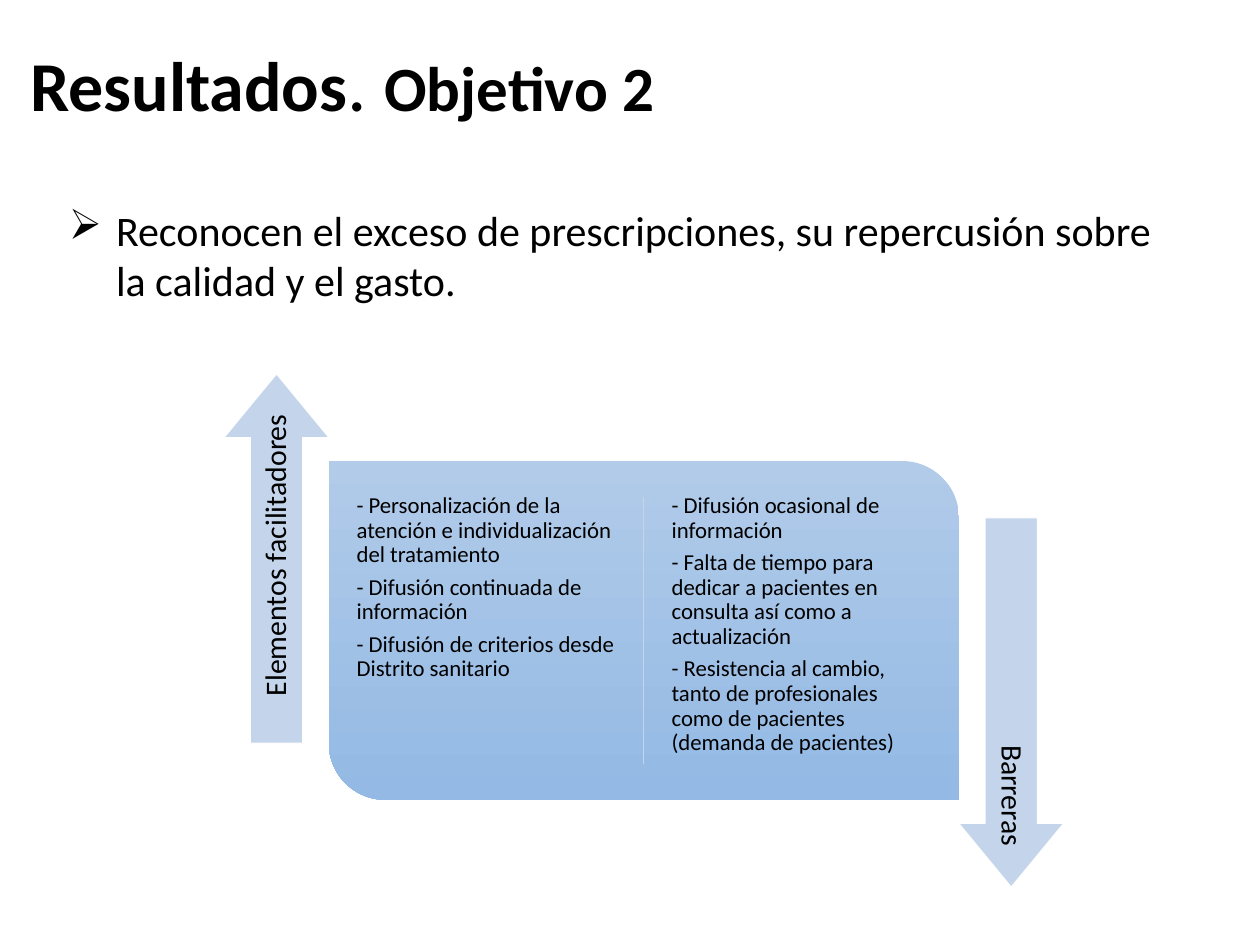
from lxml.etree import SubElement
from pptx import Presentation
from pptx.dml.color import RGBColor as RGB
from pptx.enum.shapes import MSO_CONNECTOR as LINE, MSO_SHAPE as SHAPE
from pptx.enum.text import MSO_ANCHOR as ANCHOR, PP_ALIGN as ALIGN
from pptx.oxml.ns import qn
from pptx.util import Cm, Pt

FONT = "Calibri"
COLORS = {"text": "000000", "top": "B1CBE9", "base": "93B9E4",
          "arrow": "C4D5EB", "edge": "FFFFFF"}
HELPS = ["- Personalización de la atención e individualización del tratamiento",
         "- Difusión continuada de información",
         "- Difusión de criterios desde Distrito sanitario"]
LIMITS = ["- Difusión ocasional de información",
          "- Falta de tiempo para dedicar a pacientes en consulta así como a actualización",
          "- Resistencia al cambio, tanto de profesionales como de pacientes "
          "(demanda de pacientes)"]


def color(name):
    return RGB.from_string(COLORS[name])


def spot(box):
    return [Cm(v) for v in box]


def add_text(slide, box, paras, size=13, inset=None, align=ALIGN.LEFT,
             anchor=ANCHOR.TOP, lead=0.9, after=0, turn=0):
    """Each paragraph is a string or a list of (text, size, bold) runs."""
    shape = slide.shapes.add_textbox(*spot(box))
    shape.rotation = turn
    frame = shape.text_frame
    frame.word_wrap = True
    frame.vertical_anchor = anchor
    if inset is not None:
        frame.margin_left = frame.margin_right = Cm(inset)
        frame.margin_top = frame.margin_bottom = Cm(inset)
    for i, runs in enumerate(paras):
        para = frame.add_paragraph() if i else frame.paragraphs[0]
        para.alignment = align
        para.line_spacing = lead
        para.space_after = Pt(after)
        if isinstance(runs, str):
            runs = [(runs, size, False)]
        for text, points, bold in runs:
            run = para.add_run()
            run.text = text
            font = run.font
            font.name, font.size, font.bold = FONT, Pt(points), bold
            font.color.rgb = color("text")
    return shape


def add_title(slide, box):
    add_text(slide, box, [[("Resultados", 40, True), (". ", 44, False),
                           ("Objetivo 2", 36, True)]])


def add_point(slide, box):
    shape = add_text(slide, box, [
        "Reconocen el exceso de prescripciones, su repercusión sobre "
        "la calidad y el gasto."], size=24, lead=1)
    props = shape.text_frame.paragraphs[0]._p.get_or_add_pPr()
    props.set("marL", str(Cm(0.95)))
    props.set("indent", str(Cm(-0.95)))
    SubElement(props, qn("a:buChar")).set("char", "➢")


def add_panel(slide, box):
    left, top, width, height = box
    panel = slide.shapes.add_shape(SHAPE.ROUND_2_DIAG_RECTANGLE, *spot(box))
    panel.adjustments[0], panel.adjustments[1] = 0, 0.167
    panel.shadow.inherit = False
    panel.line.fill.background()
    panel.fill.gradient()
    panel.fill.gradient_angle = 270
    for stop, name in zip(panel.fill.gradient_stops, ("top", "base")):
        stop.color.rgb = color(name)

    half = width / 2
    rule = slide.shapes.add_connector(LINE.STRAIGHT, *spot(
        (left + half, top + 0.73, left + half, top + height - 0.73)))
    rule.line.color.rgb = color("arrow")
    rule.line.width = Pt(0.5)
    SubElement(rule._element.spPr, qn("a:effectLst"))

    for i, items in enumerate((HELPS, LIMITS)):
        add_text(slide, (left + i * half + 0.43, top + 0.53, 5.51, 5.79),
                 items, inset=0.13, after=4.5)


def add_arrow(slide, box, label, turn):
    """Fill an upright box with an arrow; turn is 270 for up, 90 for down."""
    left, top, width, height = box
    mid_x, mid_y = left + width / 2, top + height / 2
    arrow = slide.shapes.add_shape(SHAPE.RIGHT_ARROW, *spot(
        (mid_x - height / 2, mid_y - width / 2, height, width)))
    arrow.rotation = turn
    arrow.adjustments[0], arrow.adjustments[1] = 0.498, 0.607
    arrow.shadow.inherit = False
    arrow.fill.solid()
    arrow.fill.fore_color.rgb = color("arrow")
    arrow.line.color.rgb = color("edge")
    arrow.line.width = Pt(0.5)

    long, deep = 6.81, 1.07
    shift = 0.32 if turn == 270 else -0.32
    add_text(slide, (mid_x - long / 2, mid_y + shift - deep / 2, long, deep),
             [label], size=17, inset=0.18, align=ALIGN.RIGHT,
             anchor=ANCHOR.MIDDLE, turn=turn)


def add_diagram(slide, box):
    left, top, width, height = box
    side, tall, deep = 2.11, 7.44, 6.83
    add_panel(slide, (left + side, top + (height - deep) / 2,
                      width - 2 * side, deep))
    add_arrow(slide, (left, top, side, tall), "Elementos facilitadores", 270)
    add_arrow(slide, (left + width - side, top + height - tall, side, tall),
              "Barreras", 90)


def main():
    deck = Presentation()
    deck.slide_width, deck.slide_height = Cm(25.4), Cm(19.05)
    slide = deck.slides.add_slide(deck.slide_layouts[6])
    add_title(slide, (0.36, 0.79, 21.89, 3.68))
    add_point(slide, (1.14, 3.99, 22.76, 2.31))
    add_diagram(slide, (4.52, 7.54, 16.92, 10.34))
    deck.save("out.pptx")


if __name__ == "__main__":
    main()
